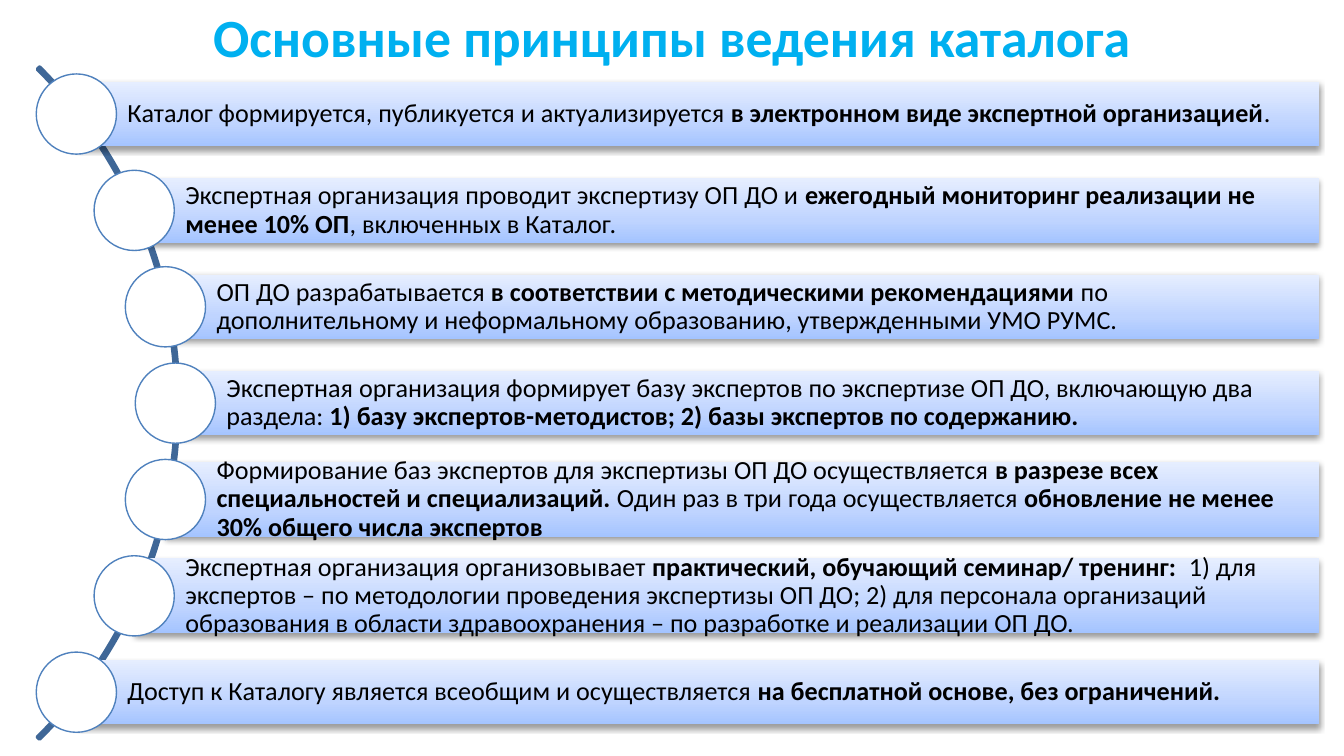
import math
import pptx
import pptx.util
import pptx.oxml
import pptx.oxml.ns
import pptx.dml.color
import pptx.enum.shapes
import pptx.enum.text

WIDE = 10
HIGH = WIDE * 9 / 16
UNIT = WIDE / 100
HUB_X, HUB_Y, REACH = -22.05, 30, 35.1
STEP, DOT, EDGE = 7.17, 5.97, 98.15
LOW, TALL = 4.8, 5.6

HUES = {
    "title": "00B0F0", "arc": "3F6797", "ring": "4F81BD", "dot": "FFFFFF",
    "text": "000000", "base": "A4C4FF", "mid": "BFD4FF", "top": "E6EEFF",
}
STOPS = [("base", 0), ("mid", 35), ("top", 100)]
KIND = pptx.enum.shapes.MSO_SHAPE
ALIGN = pptx.enum.text.PP_ALIGN
FRAME = {
    "word_wrap": True,
    "auto_size": pptx.enum.text.MSO_AUTO_SIZE.NONE,
    "vertical_anchor": pptx.enum.text.MSO_ANCHOR.MIDDLE,
}
INSET = {
    "margin_left": pptx.util.Inches(0.38),
    "margin_right": pptx.util.Inches(0.04),
    "margin_top": pptx.util.Inches(0.04),
    "margin_bottom": pptx.util.Inches(0.04),
}
PARA = {
    "alignment": ALIGN.LEFT,
    "line_spacing": 0.9,
    "space_after": pptx.util.Pt(4.9),
}
HEAD = {"name": "Calibri", "size": pptx.util.Pt(28.8), "bold": True}
BODY = {"name": "Calibri", "size": pptx.util.Pt(14)}

ROWS = [
    (LOW, ["Каталог формируется, публикуется и актуализируется ",
           "в электронном виде экспертной организацией", "."]),
    (LOW, ["Экспертная организация проводит экспертизу ОП ДО и ",
           "ежегодный мониторинг реализации не менее 10% ОП",
           ", включенных в Каталог."]),
    (LOW, ["ОП ДО разрабатывается ",
           "в соответствии с методическими рекомендациями",
           " по дополнительному и неформальному образованию, "
           "утвержденными УМО РУМС."]),
    (LOW, ["Экспертная организация формирует базу экспертов по экспертизе "
           "ОП ДО, включающую два раздела: ",
           "1) базу экспертов-методистов; 2) базы экспертов по содержанию."]),
    (TALL, ["Формирование баз экспертов для экспертизы ОП ДО осуществляется ",
            "в разрезе всех специальностей и специализаций.",
            " Один раз в три года осуществляется ",
            "обновление не менее 30% общего числа экспертов"]),
    (TALL, ["Экспертная организация организовывает ",
            "практический, обучающий семинар/ тренинг:  ",
            "1) для экспертов – по методологии проведения экспертизы ОП ДО; "
            "2) для персонала организаций образования в области "
            "здравоохранения – по разработке и реализации ОП ДО."]),
    (LOW, ["Доступ к Каталогу является всеобщим и осуществляется ",
           "на бесплатной основе, без ограничений."]),
]


def hue(name):
    return pptx.dml.color.RGBColor.from_string(HUES[name])


def span(*units):
    return [pptx.util.Inches(u * UNIT) for u in units]


def put(thing, values):
    for name, value in values.items():
        setattr(thing, name, value)


def add_run(para, text, values, tint):
    run = para.add_run()
    run.text = text
    put(run.font, values)
    run.font.color.rgb = hue(tint)


def add_form(slide, kind, *box):
    form = slide.shapes.add_shape(kind, *span(*box))
    form.shadow.inherit = False
    return form


def add_line(form, tint, width):
    form.line.color.rgb = hue(tint)
    form.line.width = pptx.util.Pt(width)


def add_title(slide, text):
    title = slide.shapes.title
    places = span(0, 0.1, 100, 5.2)
    put(title, dict(zip(("left", "top", "width", "height"), places)))
    put(title.text_frame, FRAME)
    para = title.text_frame.paragraphs[0]
    para.alignment = ALIGN.CENTER
    add_run(para, text, HEAD, "title")


def add_arc(slide):
    size = 70.7
    arc = add_form(slide, KIND.BLOCK_ARC, HUB_X - size / 2,
                   HUB_Y - size / 2, size, size)
    for i, value in enumerate((189, 27, 0.003)):
        arc.adjustments[i] = value
    arc.fill.background()
    add_line(arc, "arc", 2)


def shade(bar):
    space = pptx.oxml.ns.nsdecls("a")
    stops = "".join(
        f'<a:gs pos="{at * 1000}"><a:srgbClr val="{HUES[name]}"/></a:gs>'
        for name, at in STOPS)
    props = bar._element.spPr
    props.find(pptx.oxml.ns.qn("a:prstGeom")).addnext(pptx.oxml.parse_xml(
        f'<a:gradFill {space} rotWithShape="1"><a:gsLst>{stops}</a:gsLst>'
        '<a:lin ang="16200000" scaled="0"/></a:gradFill>'))
    props.find(pptx.oxml.ns.qn("a:effectLst")).append(pptx.oxml.parse_xml(
        f'<a:outerShdw {space} blurRad="40000" dist="20000" dir="5400000" '
        'rotWithShape="0"><a:srgbClr val="000000"><a:alpha val="38000"/>'
        '</a:srgbClr></a:outerShdw>'))


def add_bar(slide, *box):
    bar = add_form(slide, KIND.RECTANGLE, *box)
    bar.line.fill.background()
    shade(bar)


def add_text(slide, parts, *box):
    frame = slide.shapes.add_textbox(*span(*box)).text_frame
    put(frame, {**FRAME, **INSET})
    para = frame.paragraphs[0]
    put(para, PARA)
    for i, text in enumerate(parts):
        add_run(para, text, {**BODY, "bold": i % 2 == 1}, "text")


def add_dot(slide, x, y):
    dot = add_form(slide, KIND.OVAL, x - DOT / 2, y - DOT / 2, DOT, DOT)
    dot.fill.solid()
    dot.fill.fore_color.rgb = hue("dot")
    add_line(dot, "ring", 0.75)


def main():
    deck = pptx.Presentation()
    deck.slide_width = pptx.util.Inches(WIDE)
    deck.slide_height = pptx.util.Inches(HIGH)
    slide = deck.slides.add_slide(deck.slide_layouts[5])
    add_title(slide, "Основные принципы ведения каталога")
    add_arc(slide)
    for i, (high, parts) in enumerate(ROWS):
        rise = (i - len(ROWS) // 2) * STEP
        x, y = HUB_X + math.sqrt(REACH ** 2 - rise ** 2), HUB_Y + rise
        box = x, y - high / 2, EDGE - x, high
        add_bar(slide, *box)
        add_text(slide, parts, *box)
        add_dot(slide, x, y)
    deck.save("out.pptx")


if __name__ == "__main__":
    main()
